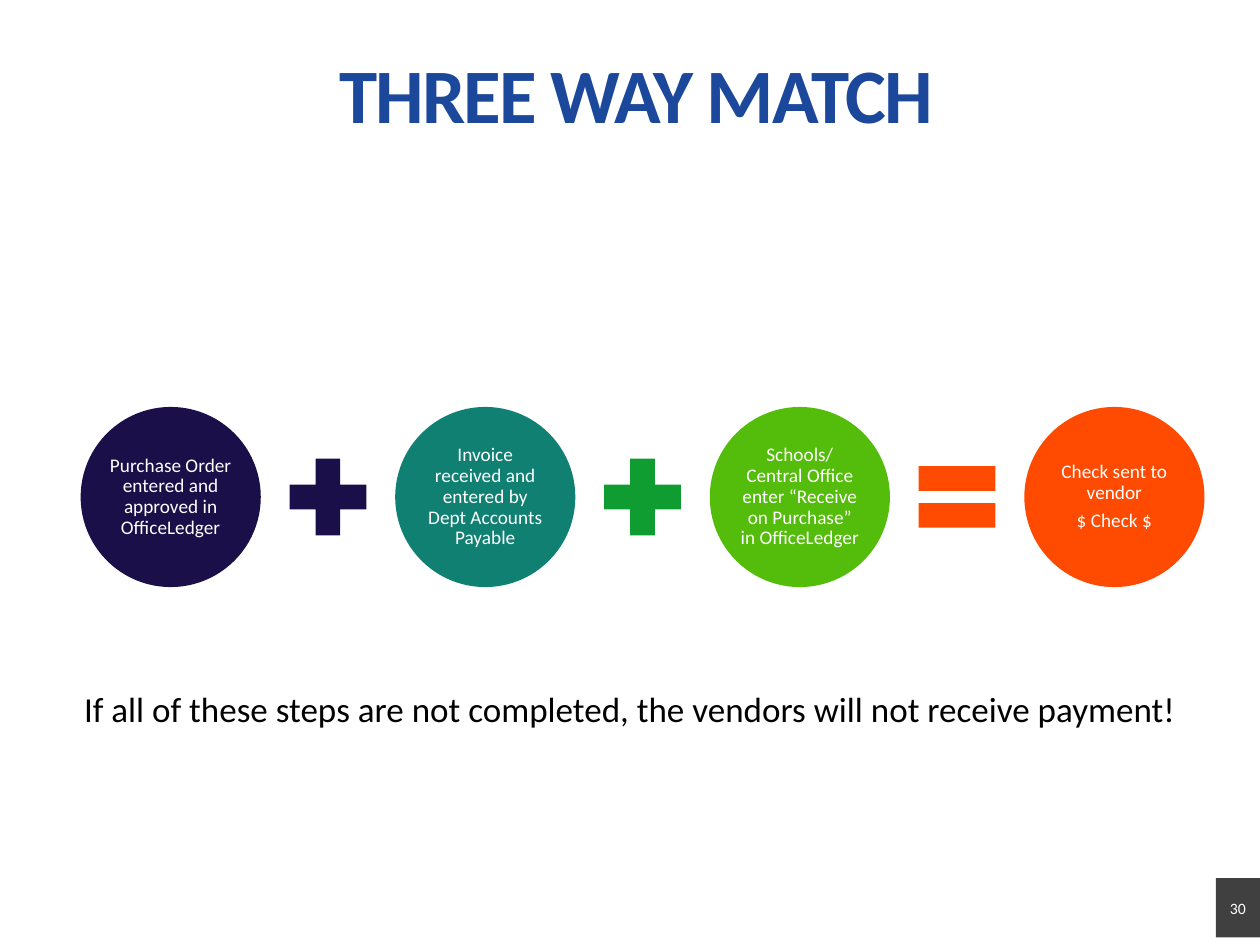
from pptx import Presentation
from pptx.dml.color import RGBColor
from pptx.enum.shapes import MSO_SHAPE
from pptx.enum.text import MSO_ANCHOR, PP_ALIGN
from pptx.util import Inches, Pt

COLORS = {
    "navy": "1A0F49",
    "teal": "108073",
    "green": "0F9D31",
    "lime": "54BD0B",
    "orange": "FF4A01",
    "title": "1B489B",
    "badge": "404040",
    "white": "FFFFFF",
    "black": "000000",
}

STEPS = [
    (["Purchase Order entered and approved in OfficeLedger"], "navy"),
    (["Invoice received and entered by Dept Accounts Payable"], "teal"),
    (["Schools/Central Office enter “Receive on Purchase” in OfficeLedger"], "lime"),
    (["Check sent to vendor", "$ Check $"], "orange"),
]
OPERATORS = [
    (MSO_SHAPE.MATH_PLUS, "navy"),
    (MSO_SHAPE.MATH_PLUS, "green"),
    (MSO_SHAPE.MATH_EQUAL, "orange"),
]


def write_text(shape, paragraphs, *, size, color, bold=False, tracking=None,
               line_spacing=None, space_after=0, inset=0, anchor=MSO_ANCHOR.MIDDLE):
    """Write centred paragraphs into a shape with the given format."""
    frame = shape.text_frame
    frame.word_wrap = True
    frame.vertical_anchor = anchor
    frame.margin_left = frame.margin_right = Inches(inset)
    frame.margin_top = frame.margin_bottom = Inches(inset)
    for index, wording in enumerate(paragraphs):
        paragraph = frame.add_paragraph() if index else frame.paragraphs[0]
        paragraph.alignment = PP_ALIGN.CENTER
        paragraph.space_after = Pt(space_after)
        if line_spacing:
            paragraph.line_spacing = line_spacing
        run = paragraph.add_run()
        run.text = wording
        run.font.name = "Calibri"
        run.font.size = Pt(size)
        run.font.bold = bold
        run.font.color.rgb = RGBColor.from_string(COLORS[color])
        if tracking:
            run._r.get_or_add_rPr().set("spc", str(tracking))


def add_filled(slide, preset, left, top, width, height, color):
    """Add a flat preset shape without outline or shadow."""
    shape = slide.shapes.add_shape(preset, left, top, width, height)
    shape.shadow.inherit = False
    shape.fill.solid()
    shape.fill.fore_color.rgb = RGBColor.from_string(COLORS[color])
    shape.line.fill.background()
    return shape


def add_title(slide, left, top, width, height):
    """Place the heading in its box."""
    heading = slide.shapes.add_textbox(left, top, width, height)
    write_text(heading, ["THREE WAY MATCH"], size=44, color="title", bold=True,
               tracking=-110, line_spacing=0.9)


def add_equation(slide, left, top, width, height):
    """Place the steps as circles joined by operators across the box."""
    pitch = (width - height) // (len(STEPS) - 1)
    operator_size = Inches(0.83)
    operator_inset = (pitch + height - operator_size) // 2
    for index, (wording, color) in enumerate(STEPS):
        circle = add_filled(slide, MSO_SHAPE.OVAL, left + index * pitch, top,
                            height, height, color)
        write_text(circle, wording, size=11, color="white", line_spacing=0.9,
                   space_after=4, inset=0.02)
    for index, (preset, color) in enumerate(OPERATORS):
        add_filled(slide, preset, left + index * pitch + operator_inset,
                   top + (height - operator_size) // 2,
                   operator_size, operator_size, color)


def add_warning(slide, left, top, width, height):
    """Place the closing sentence in its box."""
    warning = slide.shapes.add_textbox(left, top, width, height)
    write_text(warning,
               ["If all of these steps are not completed, the vendors will not receive payment!"],
               size=20, color="black", inset=0.05, anchor=MSO_ANCHOR.TOP)


def add_page_number(slide, left, top, width, height):
    """Place the page number badge in its box."""
    badge = add_filled(slide, MSO_SHAPE.RECTANGLE, left, top, width, height, "badge")
    write_text(badge, ["30"], size=9, color="white")


def main():
    """Build and save the slide."""
    presentation = Presentation()
    presentation.slide_width = Inches(10)
    presentation.slide_height = Inches(7.5)
    slide = presentation.slides.add_slide(presentation.slide_layouts[6])
    add_equation(slide, Inches(0.64), Inches(3.23), Inches(8.92), Inches(1.43))
    add_warning(slide, Inches(0), Inches(5.41), Inches(10), Inches(0.44))
    add_page_number(slide, Inches(9.65), Inches(6.97), Inches(0.35), Inches(0.47))
    add_title(slide, Inches(0.1), Inches(0.37), Inches(9.9), Inches(0.82))
    presentation.save("out.pptx")


if __name__ == "__main__":
    main()
